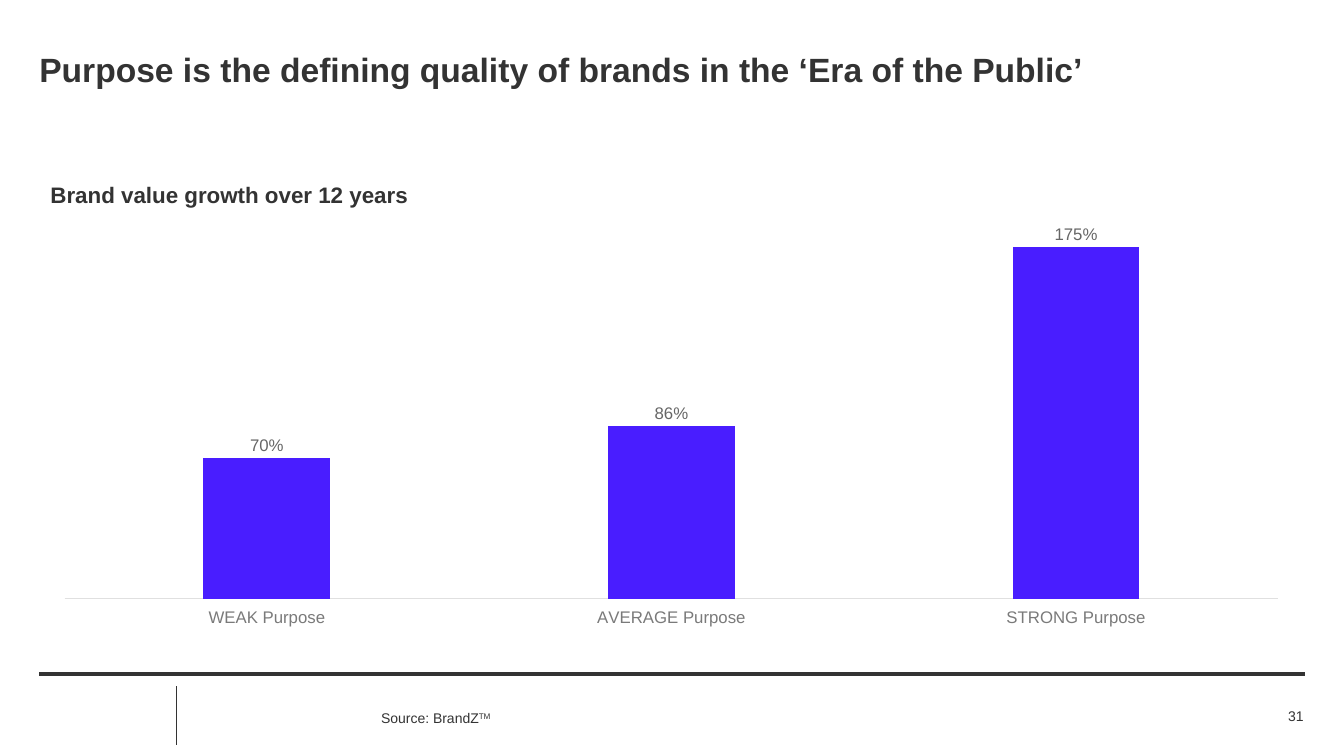
from lxml import etree
from pptx import Presentation
from pptx.chart.data import CategoryChartData
from pptx.dml.color import RGBColor
from pptx.enum.chart import XL_CHART_TYPE, XL_LABEL_POSITION, XL_TICK_LABEL_POSITION, XL_TICK_MARK
from pptx.enum.shapes import MSO_CONNECTOR
from pptx.enum.text import MSO_ANCHOR, PP_ALIGN
from pptx.oxml.ns import qn
from pptx.util import Inches, Pt

COLUMNS = XL_CHART_TYPE.COLUMN_CLUSTERED
OUTSIDE_END = XL_LABEL_POSITION.OUTSIDE_END
LOW = XL_TICK_LABEL_POSITION.LOW
NO_TICKS = XL_TICK_MARK.NONE
STRAIGHT = MSO_CONNECTOR.STRAIGHT
TOP, MIDDLE = MSO_ANCHOR.TOP, MSO_ANCHOR.MIDDLE
LEFT, RIGHT = PP_ALIGN.LEFT, PP_ALIGN.RIGHT

THEME = {
    "font": "Arial",
    "ink": RGBColor.from_string("333333"),
    "bar": RGBColor.from_string("491DFF"),
    "axis_text": RGBColor.from_string("7A7A7A"),
    "axis_line": RGBColor.from_string("E0E0E0"),
    "label": RGBColor.from_string("666666"),
    "title_size": 24,
    "heading_size": 16,
    "chart_size": 12,
    "footer_size": 10,
}

GROWTH = {"WEAK Purpose": 0.7, "AVERAGE Purpose": 0.86, "STRONG Purpose": 1.75}
CHART_BOX = (0.39, 1.87, 12.54, 4.38)
PLOT_AREA = {"x": 0.02, "y": 0.02, "w": 0.96, "h": 0.91}

TEXTS = [
    ((0.39, 0.47, 12.54, 0.44), "title_size", True, MIDDLE, LEFT,
     [("Purpose is the defining quality of brands in the ‘Era of the Public’", 0)]),
    ((0.5, 1.8, 5.35, 0.27), "heading_size", True, TOP, LEFT,
     [("Brand value growth over 12 years", 0)]),
    ((11.87, 6.99, 1.06, 0.22), "footer_size", False, MIDDLE, RIGHT, [("31", 0)]),
    ((3.78, 7.01, 8.2, 0.22), "footer_size", False, MIDDLE, LEFT,
     [("Source: BrandZ", 0), ("TM", 30000)]),
]

RULES = [((1.75, 6.81, 1.75, 7.39), 1), ((0.39, 6.69, 12.94, 6.69), 3)]


def style_font(font, size, color, bold=False):
    font.name = THEME["font"]
    font.size = Pt(size)
    font.bold = bold
    font.color.rgb = color


def add_rule(slide, ends, width):
    rule = slide.shapes.add_connector(STRAIGHT, *map(Inches, ends))
    rule.line.color.rgb = THEME["ink"]
    rule.line.width = Pt(width)
    etree.SubElement(rule.element.spPr, qn("a:effectLst"))


def add_text(slide, box, size, bold, anchor, alignment, runs):
    frame = slide.shapes.add_textbox(*map(Inches, box)).text_frame
    frame.word_wrap = True
    frame.vertical_anchor = anchor
    frame.margin_left = frame.margin_right = 0
    frame.margin_top = frame.margin_bottom = 0
    paragraph = frame.paragraphs[0]
    paragraph.alignment = alignment
    for text, baseline in runs:
        run = paragraph.add_run()
        run.text = text
        style_font(run.font, THEME[size], THEME["ink"], bold)
        if baseline:
            run.font._element.set("baseline", str(baseline))


def set_plot_area(chart):
    plot_area = chart.element.find(".//" + qn("c:plotArea"))
    layout = plot_area.find(qn("c:layout"))
    if layout is None:
        layout = etree.Element(qn("c:layout"))
        plot_area.insert(0, layout)
    manual = etree.SubElement(layout, qn("c:manualLayout"))
    settings = {"layoutTarget": "inner", "xMode": "edge", "yMode": "edge", **PLOT_AREA}
    for name, value in settings.items():
        etree.SubElement(manual, qn("c:" + name)).set("val", str(value))


def add_growth_chart(slide):
    data = CategoryChartData(number_format="0%")
    data.categories = list(GROWTH)
    data.add_series("Series 1", list(GROWTH.values()))
    chart = slide.shapes.add_chart(COLUMNS, *map(Inches, CHART_BOX), data).chart
    chart.has_title = False
    chart.has_legend = False
    style_font(chart.font, THEME["footer_size"], THEME["ink"])
    set_plot_area(chart)

    category_axis = chart.category_axis
    category_axis.major_tick_mark = category_axis.minor_tick_mark = NO_TICKS
    category_axis.tick_label_position = LOW
    category_axis.format.line.color.rgb = THEME["axis_line"]
    category_axis.format.line.width = Pt(0.75)
    style_font(category_axis.tick_labels.font, THEME["chart_size"], THEME["axis_text"])

    value_axis = chart.value_axis
    value_axis.minimum_scale, value_axis.maximum_scale = 0, 2
    value_axis.has_major_gridlines = False
    value_axis.tick_labels.number_format = "0%"
    value_axis.tick_labels.number_format_is_linked = False
    value_axis.visible = False

    plot = chart.plots[0]
    plot.vary_by_categories = False
    plot.gap_width = 219
    plot.overlap = -27
    series = plot.series[0]
    series.format.fill.solid()
    series.format.fill.fore_color.rgb = THEME["bar"]
    labels = series.data_labels
    labels.show_value = True
    labels.position = OUTSIDE_END
    labels.number_format = "0%"
    labels.number_format_is_linked = False
    style_font(labels.font, THEME["chart_size"], THEME["label"])


def main():
    presentation = Presentation()
    presentation.slide_width = Inches(13.33)
    presentation.slide_height = Inches(7.5)
    slide = presentation.slides.add_slide(presentation.slide_layouts[6])
    for ends, width in RULES:
        add_rule(slide, ends, width)
    add_growth_chart(slide)
    for text in TEXTS:
        add_text(slide, *text)
    presentation.save("out.pptx")


if __name__ == "__main__":
    main()
